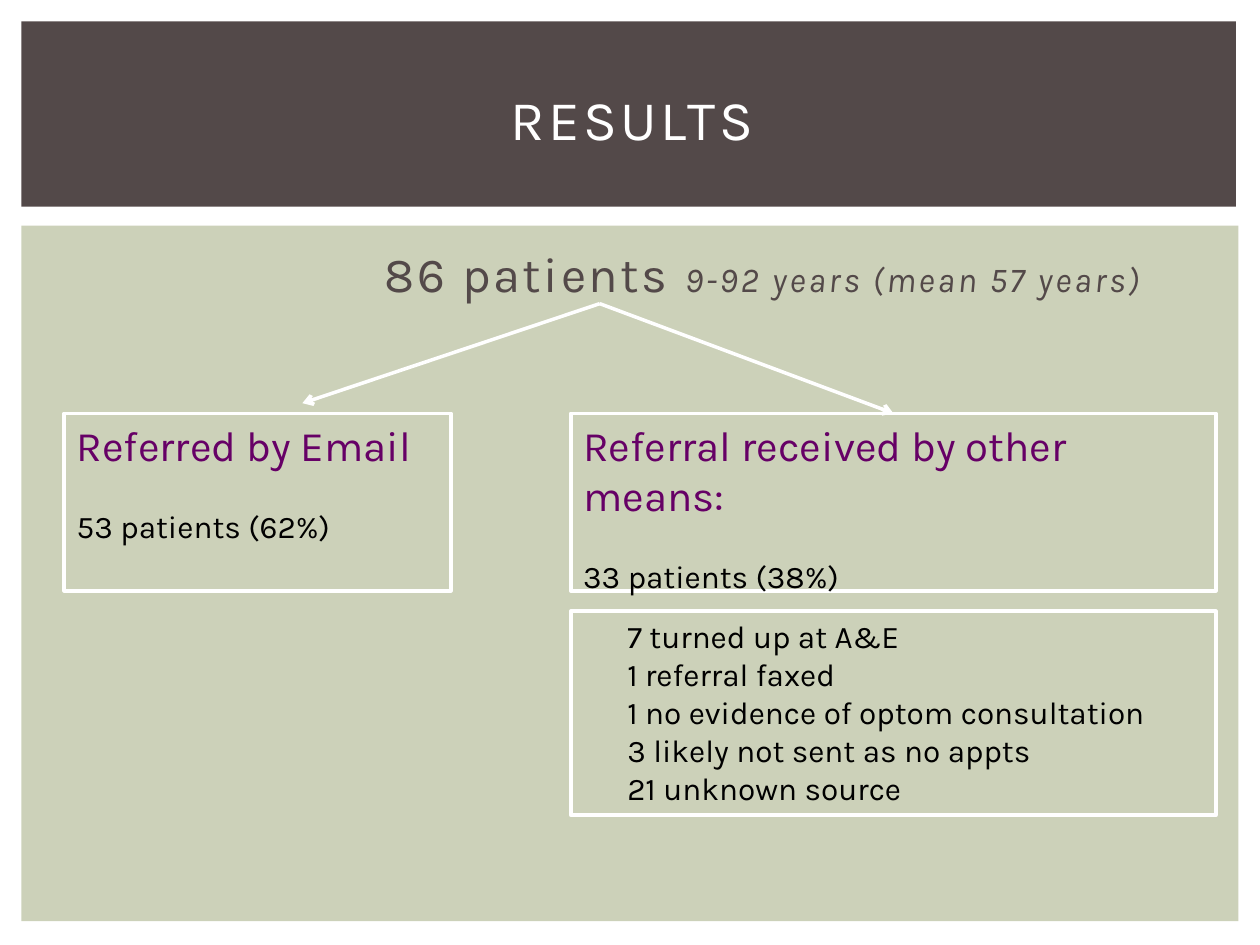
from lxml.etree import SubElement
from pptx import Presentation
from pptx.dml.color import RGBColor
from pptx.enum.shapes import MSO_CONNECTOR, MSO_SHAPE
from pptx.enum.text import MSO_ANCHOR, MSO_AUTO_SIZE, PP_ALIGN
from pptx.oxml.ns import qn
from pptx.util import Inches, Pt

COLORS = {
    "white": "FFFFFF",
    "band": "534949",
    "panel": "CCD1B9",
    "heading": "660066",
    "text": "000000",
}
COLUMNS, ROWS = 100, 75


class SlideBuilder:
    font_name = "Karla"
    line_width = Pt(2)

    def __init__(self):
        self.deck = Presentation()
        self.deck.slide_width, self.deck.slide_height = Inches(10), Inches(7.5)
        self.slide = self.deck.slides.add_slide(self.deck.slide_layouts[1])

    def color(self, name):
        return RGBColor.from_string(COLORS[name])

    def grid(self, column, row):
        return (round(self.deck.slide_width * column / COLUMNS),
                round(self.deck.slide_height * row / ROWS))

    def area(self, left, top, width, height):
        return self.grid(left, top) + self.grid(width, height)

    def add_text(self, paragraph, text, color, size, spacing=0, **styles):
        run = paragraph.add_run()
        run.text = text
        formats = {"name": self.font_name, "size": Pt(size), **styles}
        for attribute, value in formats.items():
            setattr(run.font, attribute, value)
        run.font.color.rgb = self.color(color)
        if spacing:
            run._r.get_or_add_rPr().set("spc", str(round(spacing * 100)))

    def placeholder(self, index, area, anchor, runs, indent=0):
        holder = self.slide.placeholders[index]
        for attribute, value in zip(("left", "top", "width", "height"), self.area(*area)):
            setattr(holder, attribute, value)
        frame = holder.text_frame
        frame.vertical_anchor = anchor
        frame.auto_size = MSO_AUTO_SIZE.NONE
        paragraph = frame.paragraphs[0]
        paragraph.alignment = PP_ALIGN.CENTER
        properties = paragraph._p.get_or_add_pPr()
        properties.set("marL", str(self.grid(indent, 0)[0]))
        properties.set("indent", "0")
        SubElement(properties, qn("a:buNone"))
        for run in runs:
            self.add_text(paragraph, **run)

    def rectangle(self, area):
        shape = self.slide.shapes.add_shape(MSO_SHAPE.RECTANGLE, *self.area(*area))
        shape.shadow.inherit = False
        return shape

    def backdrop(self, area, color):
        shape = self.rectangle(area)
        shape.fill.solid()
        shape.fill.fore_color.rgb = self.color(color)
        shape.line.fill.background()
        self.slide.shapes.element.insert(2, shape.element)

    def box(self, area, lines, indent=0):
        shape = self.rectangle(area)
        shape.fill.background()
        shape.line.color.rgb = self.color("white")
        shape.line.width = self.line_width
        frame = shape.text_frame
        frame.word_wrap = True
        frame.vertical_anchor = MSO_ANCHOR.TOP
        for number, (text, color, size, before) in enumerate(lines):
            paragraph = frame.add_paragraph() if number else frame.paragraphs[0]
            paragraph.alignment = PP_ALIGN.LEFT
            paragraph.space_before = Pt(before)
            paragraph._p.get_or_add_pPr().set("marL", str(self.grid(indent, 0)[0]))
            self.add_text(paragraph, text, color, size)

    def arrow(self, start, end):
        connector = self.slide.shapes.add_connector(
            MSO_CONNECTOR.STRAIGHT, *self.grid(*start), *self.grid(*end))
        connector.line.color.rgb = self.color("white")
        connector.line.width = self.line_width
        properties = connector.element.spPr
        SubElement(properties.find(qn("a:ln")), qn("a:tailEnd"), type="arrow")
        SubElement(properties, qn("a:effectLst"))


def main():
    builder = SlideBuilder()
    builder.backdrop((1.7, 1.7, 96.4, 14.7), "band")
    builder.backdrop((1.7, 17.9, 96.6, 55.2), "panel")

    builder.placeholder(0, (4.3, 3.6, 91.7, 11.5), MSO_ANCHOR.MIDDLE, [
        {"text": "RESULTS", "color": "white", "size": 32, "spacing": 2},
    ])
    builder.placeholder(1, (4.2, 18.8, 91.9, 12.4), MSO_ANCHOR.TOP, [
        {"text": "86 patients ", "color": "band", "size": 28, "spacing": 1.5},
        {"text": "9-92 years (mean 57 years)", "color": "band", "size": 20,
         "spacing": 1.5, "italic": True},
    ], indent=20.7)

    other_left, other_width = 45.3, 51.2
    groups = [
        (5.1, 30.7, "Referred by Email", "53 patients (62%)"),
        (other_left, other_width, "Referral received by other means:", "33 patients (38%)"),
    ]
    for left, width, heading, count in groups:
        builder.box((left, 32.8, width, 14.1),
                    [(heading, "heading", 24, 0), (count, "text", 18, 21)])

    for end in [(24, 32), (70.9, 32.8)]:
        builder.arrow((47.6, 24.1), end)

    other_routes = [
        "7 turned up at A&E",
        "1 referral faxed",
        "1 no evidence of optom consultation",
        "3 likely not sent as no appts",
        "21 unknown source",
    ]
    builder.box((other_left, 48.5, other_width, 16.2),
                [(route, "text", 18, 0) for route in other_routes], indent=3.5)

    builder.deck.save("out.pptx")


if __name__ == "__main__":
    main()
